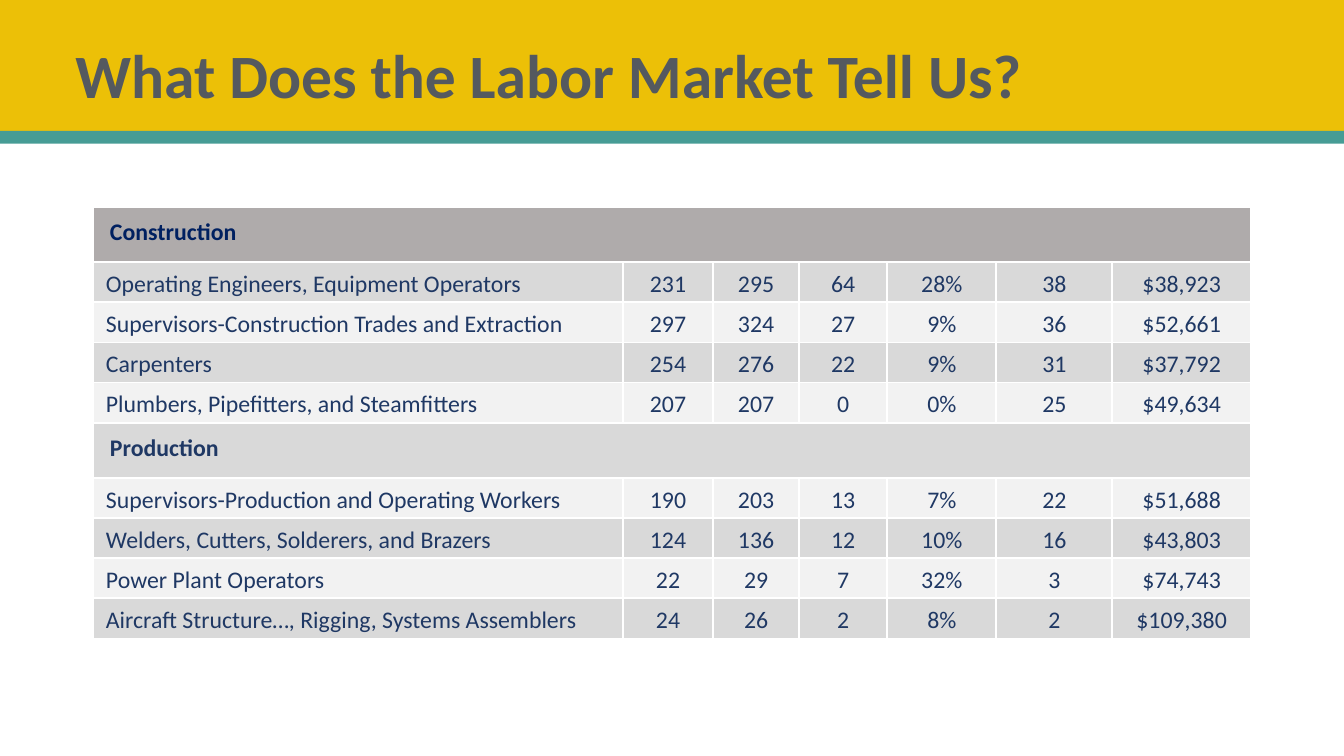
from lxml import etree
from pptx import Presentation
from pptx.dml.color import RGBColor
from pptx.enum.shapes import MSO_SHAPE
from pptx.enum.text import MSO_ANCHOR, PP_ALIGN
from pptx.oxml.ns import qn
from pptx.util import Cm, Pt

RECTANGLE = MSO_SHAPE.RECTANGLE
TOP, MIDDLE = MSO_ANCHOR.TOP, MSO_ANCHOR.MIDDLE
LEFT, CENTER = PP_ALIGN.LEFT, PP_ALIGN.CENTER

SLIDE_WIDTH, SLIDE_HEIGHT = 33.87, 19.05
COLUMN_WIDTHS = [13.36, 2.27, 2.17, 2.22, 2.75, 2.92, 3.5]
SECTION_HEIGHT, JOB_HEIGHT = 1.4, 1.01
SECTION_INSETS = (0.43, 0.23, 0.43, 0.23)
JOB_INSETS = (0.33, 0.05, 0.33, 0)

# A row with a single entry is a section heading across the table.
LABOR_MARKET = [
    ["Construction"],
    ["Operating Engineers, Equipment Operators", "231", "295", "64", "28%", "38", "$38,923"],
    ["Supervisors-Construction Trades and Extraction", "297", "324", "27", "9%", "36", "$52,661"],
    ["Carpenters", "254", "276", "22", "9%", "31", "$37,792"],
    ["Plumbers, Pipefitters, and Steamfitters", "207", "207", "0", "0%", "25", "$49,634"],
    ["Production"],
    ["Supervisors-Production and Operating Workers", "190", "203", "13", "7%", "22", "$51,688"],
    ["Welders, Cutters, Solderers, and Brazers", "124", "136", "12", "10%", "16", "$43,803"],
    ["Power Plant Operators", "22", "29", "7", "32%", "3", "$74,743"],
    ["Aircraft Structure…, Rigging, Systems Assemblers", "24", "26", "2", "8%", "2", "$109,380"],
]


def rgb(hex_color):
    return RGBColor.from_string(hex_color)


def write(frame, text, *, size, color, font, bold=False, align=LEFT, spacing=1.0):
    paragraph = frame.paragraphs[0]
    paragraph.alignment = align
    paragraph.line_spacing = spacing
    run = paragraph.add_run()
    run.text = text
    run.font.name = font
    run.font.size = Pt(size)
    run.font.bold = bold
    run.font.color.rgb = rgb(color)


class SlideBuilder:
    font = "Calibri"
    band_color, stripe_color, title_color = "ECC007", "469C95", "54595F"
    heading_color, text_color = "002060", "1F3864"
    heading_fill, row_fills = "AFABAB", ("F2F2F2", "D9D9D9")
    border_color, border_width = "FFFFFF", 1.5

    def __init__(self, slide):
        self.slide = slide

    def bar(self, top, height, color):
        """Draw a filled strip over the full slide width."""
        bar = self.slide.shapes.add_shape(RECTANGLE, 0, Cm(top), Cm(SLIDE_WIDTH), Cm(height))
        bar.shadow.inherit = False
        bar.fill.solid()
        bar.fill.fore_color.rgb = rgb(color)
        bar.line.fill.background()

    def title(self, text, left, top, width, height):
        frame = self.slide.shapes.add_textbox(Cm(left), Cm(top), Cm(width), Cm(height)).text_frame
        frame.word_wrap = True
        frame.vertical_anchor = MIDDLE
        write(frame, text, size=44, color=self.title_color, font=self.font, bold=True, spacing=0.9)

    def borders(self, cell):
        properties = cell._tc.get_or_add_tcPr()
        for side in ("a:lnL", "a:lnR", "a:lnT", "a:lnB"):
            line = etree.SubElement(properties, qn(side), w=str(Pt(self.border_width)))
            fill = etree.SubElement(line, qn("a:solidFill"))
            etree.SubElement(fill, qn("a:srgbClr"), val=self.border_color)

    def cell(self, cell, text, fill, insets, anchor, **text_format):
        self.borders(cell)
        cell.fill.solid()
        cell.fill.fore_color.rgb = rgb(fill)
        cell.margin_left, cell.margin_top, cell.margin_right, cell.margin_bottom = map(Cm, insets)
        cell.vertical_anchor = anchor
        if text:
            write(cell.text_frame, text, size=17, font=self.font, spacing=1.07, **text_format)

    def table(self, rows, left, top):
        heights = [SECTION_HEIGHT if len(row) == 1 else JOB_HEIGHT for row in rows]
        table = self.slide.shapes.add_table(
            len(rows), len(COLUMN_WIDTHS), Cm(left), Cm(top),
            Cm(sum(COLUMN_WIDTHS)), Cm(sum(heights))).table
        for column, width in zip(table.columns, COLUMN_WIDTHS):
            column.width = Cm(width)
        for r, (entries, height) in enumerate(zip(rows, heights)):
            table.rows[r].height = Cm(height)
            is_section = len(entries) == 1
            fill = self.row_fills[r % 2] if r else self.heading_fill
            color = self.text_color if r else self.heading_color
            for c in range(len(COLUMN_WIDTHS)):
                self.cell(
                    table.cell(r, c), entries[c] if c < len(entries) else "", fill,
                    SECTION_INSETS if is_section else JOB_INSETS,
                    TOP if is_section else MIDDLE,
                    color=color, bold=is_section, align=CENTER if c else LEFT)
            if is_section:
                table.cell(r, 0).merge(table.cell(r, len(COLUMN_WIDTHS) - 1))


def main():
    presentation = Presentation()
    presentation.slide_width, presentation.slide_height = Cm(SLIDE_WIDTH), Cm(SLIDE_HEIGHT)
    builder = SlideBuilder(presentation.slides.add_slide(presentation.slide_layouts[6]))
    builder.bar(0, 3.58, builder.band_color)
    builder.bar(3.3, 0.32, builder.stripe_color)
    builder.title("What Does the Labor Market Tell Us?", 1.65, 0.13, 29.21, 3.68)
    builder.table(LABOR_MARKET, 2.34, 5.21)
    presentation.save("out.pptx")


if __name__ == "__main__":
    main()
